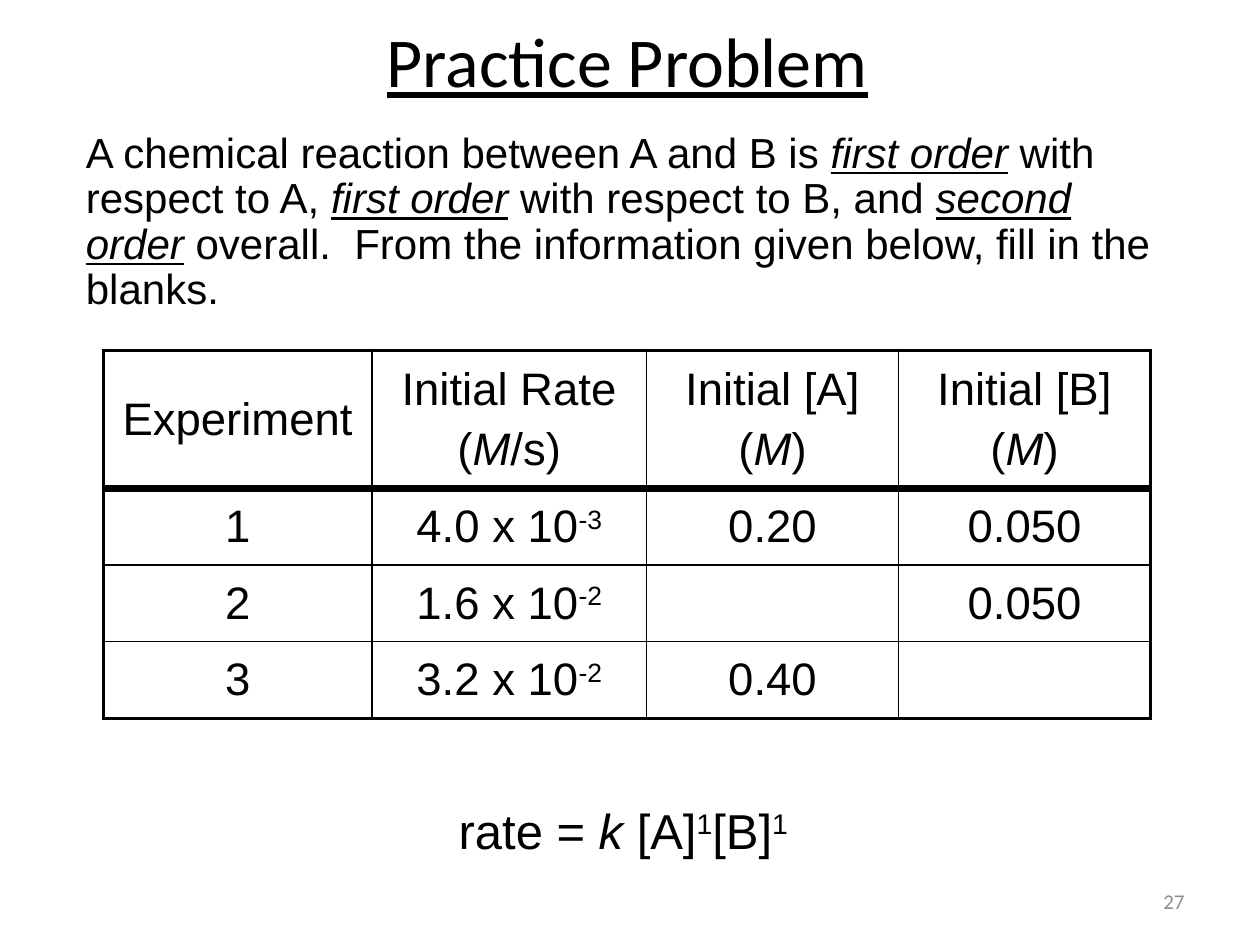
import pptx
import pptx.util
import pptx.dml.color
import pptx.enum.text
import pptx.oxml
import pptx.oxml.ns

Pt = pptx.util.Pt
ALIGN = pptx.enum.text.PP_ALIGN
MIDDLE = pptx.enum.text.MSO_ANCHOR.MIDDLE
BLACK = pptx.dml.color.RGBColor(0x00, 0x00, 0x00)
GRAY = pptx.dml.color.RGBColor(0x8C, 0x8C, 0x8C)


def write_spans(para, spans, size, font="Arial", color=BLACK):
    for text, style in spans:
        span = para.add_run()
        span.text = text
        span.font.size = Pt(size)
        span.font.name = font
        span.font.color.rgb = color
        span.font.italic = "italic" in style
        span.font.underline = "underline" in style
        if "super" in style:
            span._r.get_or_add_rPr().set("baseline", "30000")


def draw_borders(cell, widths):
    properties = cell._tc.get_or_add_tcPr()
    for position, (side, width) in enumerate(zip("LRTB", widths)):
        line = pptx.oxml.parse_xml(
            f'<a:ln{side} {pptx.oxml.ns.nsdecls("a")} w="{Pt(width)}">'
            f'<a:solidFill><a:srgbClr val="{BLACK}"/></a:solidFill></a:ln{side}>'
        )
        properties.insert(position, line)


deck = pptx.Presentation()
deck.slide_width = Pt(720)
deck.slide_height = Pt(540)
page = deck.slides.add_slide(deck.slide_layouts[5])

title = page.shapes.title
title.left, title.top, title.width, title.height = Pt(22.5), Pt(0), Pt(672), Pt(68.4)
title.text_frame.vertical_anchor = MIDDLE
title_para = title.text_frame.paragraphs[0]
title_para.alignment = ALIGN.CENTER
write_spans(title_para, [("Practice Problem", "underline")], 40, "Calibri")

problem = page.shapes.add_textbox(Pt(42), Pt(72), Pt(630), Pt(112.5))
problem.text_frame.word_wrap = True
problem_para = problem.text_frame.paragraphs[0]
problem_para.line_spacing = 0.9
write_spans(problem_para, [
    ("A chemical reaction between A and B is ", ""),
    ("first order", "italic underline"),
    (" with respect to A, ", ""),
    ("first order", "italic underline"),
    (" with respect to B, and ", ""),
    ("second order", "italic underline"),
    (" overall.  From the information given below, fill in the blanks.", ""),
], 24)

molar = [("(", ""), ("M", "italic"), (")", "")]
molar_rate = [("(", ""), ("M", "italic"), ("/s)", "")]
rows = [
    [
        [[("Experiment", "")]],
        [[("Initial Rate", "")], molar_rate],
        [[("Initial [A]", "")], molar],
        [[("Initial [B]", "")], molar],
    ]
]
for number, mantissa, exponent, initial_a, initial_b in [
    ("1", "4.0", "-3", "0.20", "0.050"),
    ("2", "1.6", "-2", "", "0.050"),
    ("3", "3.2", "-2", "0.40", ""),
]:
    rate = [(f"{mantissa} x 10", ""), (exponent, "super")]
    plain = [[[(text, "")]] if text else [] for text in (number, initial_a, initial_b)]
    rows.append([plain[0], [rate], plain[1], plain[2]])

column_widths = [153.25, 157, 144, 144]
row_heights = [79, 43.75, 43.75, 43.75]
column_lines = [2.25, 1, 1, 1, 2.25]
row_lines = [2.25, 4.5, 1, 1, 2.25]

table = page.shapes.add_table(
    4, 4, Pt(59.25), Pt(200.25), Pt(sum(column_widths)), Pt(sum(row_heights))
).table
table.first_row = False
table.horz_banding = False
for column, width in zip(table.columns, column_widths):
    column.width = Pt(width)
for row, height in zip(table.rows, row_heights):
    row.height = Pt(height)

for r, row in enumerate(rows):
    for c, lines in enumerate(row):
        cell = table.cell(r, c)
        cell.vertical_anchor = MIDDLE
        cell.fill.background()
        draw_borders(cell, [column_lines[c], column_lines[c + 1], row_lines[r], row_lines[r + 1]])
        frame = cell.text_frame
        frame.paragraphs[0].font.size = Pt(26)
        for n, spans in enumerate(lines):
            para = frame.add_paragraph() if n else frame.paragraphs[0]
            para.alignment = ALIGN.CENTER
            if n:
                para.space_before = Pt(5.2)
            write_spans(para, spans, 26)

rate_law = page.shapes.add_textbox(Pt(255), Pt(453.75), Pt(207), Pt(41))
rate_law.text_frame.word_wrap = False
write_spans(rate_law.text_frame.paragraphs[0], [
    ("rate = ", ""),
    ("k", "italic"),
    (" [A]", ""),
    ("1", "super"),
    ("[B]", ""),
    ("1", "super"),
], 28)

page_number = page.shapes.add_textbox(Pt(516), Pt(500.5), Pt(168), Pt(28.75))
page_number.text_frame.word_wrap = True
page_number.text_frame.vertical_anchor = MIDDLE
number_para = page_number.text_frame.paragraphs[0]
number_para.alignment = ALIGN.RIGHT
write_spans(number_para, [("27", "")], 12, "Calibri", GRAY)

deck.save("out.pptx")
